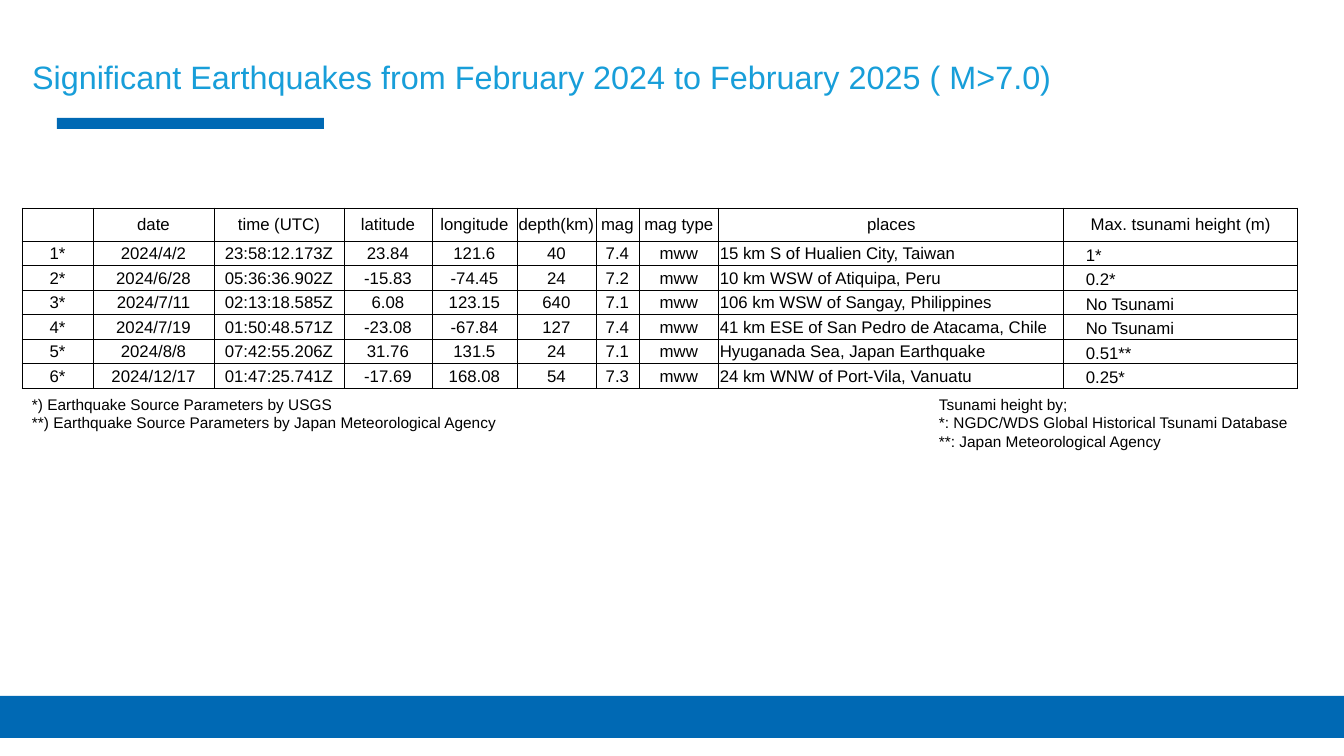
import pptx
import pptx.dml.color
import pptx.enum.shapes
import pptx.enum.text
import pptx.oxml.ns
import pptx.util
from lxml import etree

RGBColor = pptx.dml.color.RGBColor
PP_ALIGN = pptx.enum.text.PP_ALIGN
MSO_ANCHOR = pptx.enum.text.MSO_ANCHOR

PX = 914400 / 100.8
FONT = "Arial"
BLUE = RGBColor(0x00, 0x69, 0xB4)
SKY = RGBColor(0x18, 0x9E, 0xD9)
BLACK = RGBColor(0x00, 0x00, 0x00)

TITLE = "Significant Earthquakes from February 2024 to February 2025 ( M>7.0)"
HEADER = ["", "date", "time (UTC)", "latitude", "longitude", "depth(km)", "mag",
          "mag type", "places", "Max. tsunami height (m)"]
QUAKES = [
    ["1*", "2024/4/2", "23:58:12.173Z", "23.84", "121.6", "40", "7.4", "mww",
     "15 km S of Hualien City, Taiwan", "1*"],
    ["2*", "2024/6/28", "05:36:36.902Z", "-15.83", "-74.45", "24", "7.2", "mww",
     "10 km WSW of Atiquipa, Peru", "0.2*"],
    ["3*", "2024/7/11", "02:13:18.585Z", "6.08", "123.15", "640", "7.1", "mww",
     "106 km WSW of Sangay, Philippines", "No Tsunami"],
    ["4*", "2024/7/19", "01:50:48.571Z", "-23.08", "-67.84", "127", "7.4", "mww",
     "41 km ESE of San Pedro de Atacama, Chile", "No Tsunami"],
    ["5*", "2024/8/8", "07:42:55.206Z", "31.76", "131.5", "24", "7.1", "mww",
     "Hyuganada Sea, Japan Earthquake", "0.51**"],
    ["6*", "2024/12/17", "01:47:25.741Z", "-17.69", "168.08", "54", "7.3", "mww",
     "24 km WNW of Port-Vila, Vanuatu", "0.25*"],
]
COLUMN_WIDTHS = [71, 121, 130, 88, 85, 79, 43, 80, 345, 234]
HEADER_HEIGHT = 33
PLACES, TSUNAMI = 8, 9
SOURCE_NOTES = ["*) Earthquake Source Parameters by USGS",
                "**) Earthquake Source Parameters by Japan Meteorological Agency"]
TSUNAMI_NOTES = ["Tsunami height by;",
                 "*: NGDC/WDS Global Historical Tsunami Database",
                 "**: Japan Meteorological Agency"]


def px(length):
    """Turn pixels into EMU."""
    return pptx.util.Emu(round(length * PX))


def format_runs(p, size, color):
    """Set the font of every run in a paragraph."""
    for r in p.runs:
        r.font.name = FONT
        r.font.size = pptx.util.Pt(size)
        r.font.color.rgb = color


def add_bar(slide, box):
    """Draw a plain blue bar."""
    sp = slide.shapes.add_shape(pptx.enum.shapes.MSO_SHAPE.RECTANGLE, *map(px, box))
    sp.shadow.inherit = False
    sp.fill.solid()
    sp.fill.fore_color.rgb = BLUE
    sp.line.fill.background()


def place_title(slide, box):
    """Move the title placeholder into its box and format it."""
    sp = slide.shapes.title
    sp.left, sp.top, sp.width, sp.height = map(px, box)
    tf = sp.text_frame
    tf.text = TITLE
    tf.word_wrap = True
    tf.auto_size = pptx.enum.text.MSO_AUTO_SIZE.NONE
    tf.vertical_anchor = MSO_ANCHOR.BOTTOM
    p = tf.paragraphs[0]
    p.alignment = PP_ALIGN.LEFT
    p.line_spacing = 0.8
    format_runs(p, 23.1, SKY)


def add_notes(slide, box, lines):
    """Write one footnote block."""
    tf = slide.shapes.add_textbox(*map(px, box)).text_frame
    tf.word_wrap = True
    tf.text = "\n".join(lines)
    for p in tf.paragraphs:
        format_runs(p, 11, BLACK)


def add_borders(cell):
    """Give a cell thin black lines on all four sides."""
    tc_pr = cell._tc.get_or_add_tcPr()
    qn = pptx.oxml.ns.qn
    for i, side in enumerate(("a:lnL", "a:lnR", "a:lnT", "a:lnB")):
        ln = etree.Element(qn(side), w=str(pptx.util.Pt(0.5)))
        fill = etree.SubElement(ln, qn("a:solidFill"))
        etree.SubElement(fill, qn("a:srgbClr"), val=str(BLACK))
        tc_pr.insert(i, ln)


def fill_cell(cell, text, align, indent, drop):
    """Write and format one table cell."""
    cell.text = text
    cell.fill.background()
    cell.vertical_anchor = MSO_ANCHOR.MIDDLE
    cell.margin_left, cell.margin_top = px(indent), px(drop)
    cell.margin_right, cell.margin_bottom = px(1), 0
    p = cell.text_frame.paragraphs[0]
    p.alignment = align
    format_runs(p, 12, BLACK)
    add_borders(cell)


def add_quake_table(slide, box):
    """Build the earthquake table, with equal rows below its header."""
    rows = [HEADER] + QUAKES
    table = slide.shapes.add_table(len(rows), len(HEADER), *map(px, box)).table
    table.first_row = table.horz_banding = False
    for column, width in zip(table.columns, COLUMN_WIDTHS):
        column.width = px(width)
    row_height = (box[3] - HEADER_HEIGHT) / len(QUAKES)
    for i, row in enumerate(rows):
        table.rows[i].height = px(row_height if i else HEADER_HEIGHT)
        for j, text in enumerate(row):
            left = i > 0 and j in (PLACES, TSUNAMI)
            tsunami = i > 0 and j == TSUNAMI
            fill_cell(table.cell(i, j), text, PP_ALIGN.LEFT if left else PP_ALIGN.CENTER,
                      22 if tsunami else 1, 4 if tsunami else 1)


def build_slide(prs):
    """Lay out the whole earthquake slide."""
    slide = prs.slides.add_slide(prs.slide_layouts[5])
    add_bar(slide, (57, 118, 267, 11))
    add_bar(slide, (0, 696, 1344, 42))
    place_title(slide, (22, 59, 1099, 42))
    add_notes(slide, (22, 390, 530, 47), SOURCE_NOTES)
    add_notes(slide, (929, 390, 414, 66), TSUNAMI_NOTES)
    add_quake_table(slide, (22, 208, sum(COLUMN_WIDTHS), 180))


def main():
    """Create and save the presentation."""
    prs = pptx.Presentation()
    prs.slide_width, prs.slide_height = px(1344), px(756)
    build_slide(prs)
    prs.save("out.pptx")


if __name__ == "__main__":
    main()
